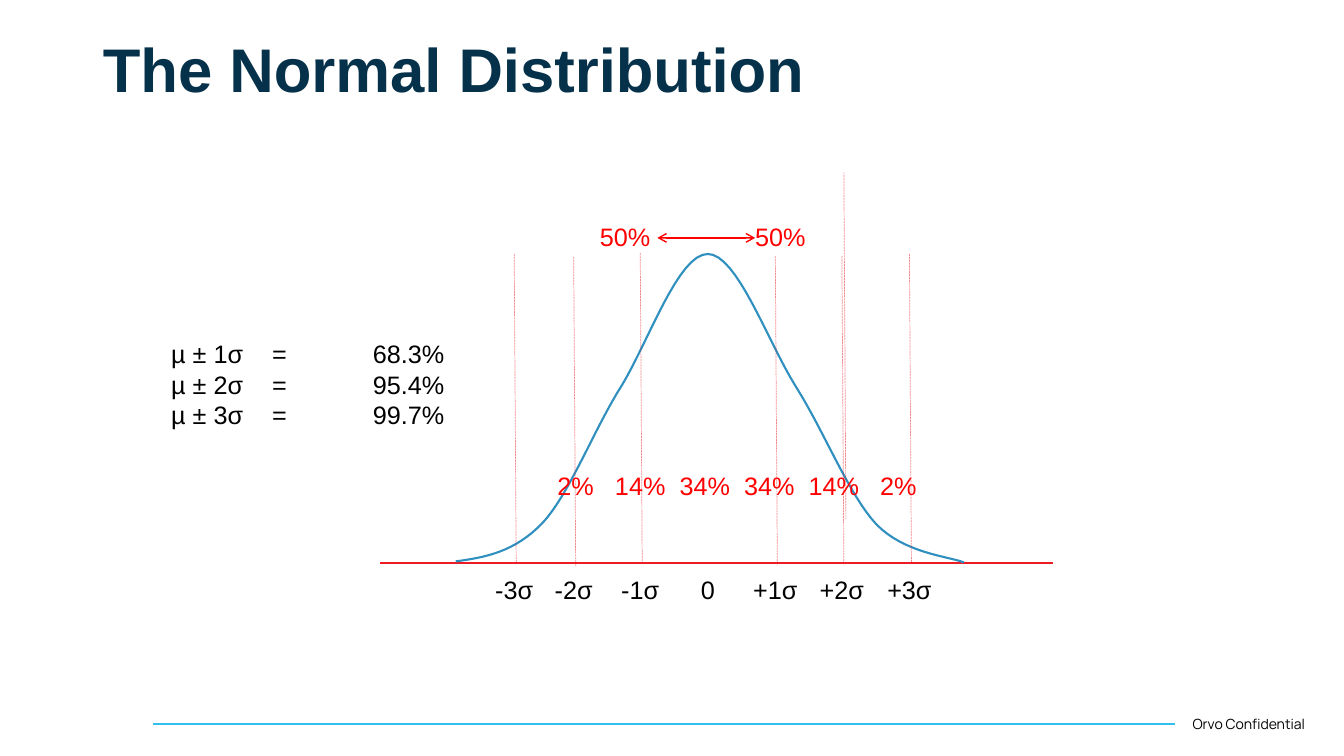
from pptx import Presentation
from pptx.dml.color import RGBColor
from pptx.enum.dml import MSO_LINE_DASH_STYLE as DASH
from pptx.enum.shapes import MSO_CONNECTOR as CONNECTOR
from pptx.enum.text import MSO_ANCHOR as ANCHOR, PP_ALIGN as ALIGN
from pptx.oxml.ns import qn
from pptx.util import Inches, Pt
from lxml.etree import SubElement

NAVY, BLACK, RED = "05314A", "000000", "FF0000"
AXIS_RED, DROP_RED, CURVE_BLUE, FOOTER_BLUE = "EC1C24", "EC161F", "2F90C0", "30BFEF"

# Curve in inches from the chart corner: a start, then (control, control, end)
CURVE_START = (0.75, 3.86)
CURVE_SEGMENTS = [
    ((1.04, 3.82), (1.33, 3.77), (1.61, 3.48)),
    ((1.88, 3.19), (2.12, 2.55), (2.4, 2.11)),
    ((2.67, 1.66), (2.96, 0.81), (3.25, 0.81)),
    ((3.54, 0.81), (3.84, 1.67), (4.12, 2.12)),
    ((4.4, 2.56), (4.65, 3.2), (4.92, 3.49)),
    ((5.2, 3.78), (5.64, 3.81), (5.79, 3.87)),
]
# Sigma label, its offset from the chart's left, top of its drop line
SIGMAS = [("-3σ", 1.33, 0.81), ("-2σ", 1.92, 0.84), ("-1σ", 2.58, 0.8), ("0", 3.25, None),
          ("+1σ", 3.92, 0.83), ("+2σ", 4.58, 0.83), ("+3σ", 5.25, 0.81)]
SHARES = ["2%", "14%", "34%", "34%", "14%", "2%"]
COVERAGE = ["µ ± 1σ\t=\t68.3%", "µ ± 2σ\t=\t95.4%", "µ ± 3σ\t=\t99.7%"]


def color(hex_code):
    return RGBColor.from_string(hex_code)


def format_text(frame, size, hex_code, name="Arial", bold=False):
    for paragraph in frame.paragraphs:
        for run in paragraph.runs:
            font = run.font
            font.size, font.name, font.bold = Pt(size), name, bold
            font.color.rgb = color(hex_code)


def add_text(slide, left, top, width, height, text, size, hex_code, name="Arial"):
    box = slide.shapes.add_textbox(Inches(left), Inches(top), Inches(width), Inches(height))
    frame = box.text_frame
    frame.word_wrap = True
    frame.text = text
    format_text(frame, size, hex_code, name)
    return frame


def add_label(slide, center, top, text, hex_code):
    frame = add_text(slide, center - 0.4, top, 0.8, 0.4, text, 18, hex_code)
    frame.paragraphs[0].alignment = ALIGN.CENTER


def add_line(slide, start, end, hex_code, width, dashed=False, arrow=False):
    line = slide.shapes.add_connector(CONNECTOR.STRAIGHT, *map(Inches, start + end))
    line.line.color.rgb = color(hex_code)
    line.line.width = Pt(width)
    outline = line.line._get_or_add_ln()
    if dashed:
        line.line.dash_style = DASH.SQUARE_DOT
        tint = outline.find(".//" + qn("a:srgbClr"))
        SubElement(tint, qn("a:alpha"), val="50000")
    if arrow:
        SubElement(outline, qn("a:tailEnd"), type="arrow")
    SubElement(line._element.spPr, qn("a:effectLst"))


def bezier_points(start, segments, steps=16):
    points = [start]
    for first, second, end in segments:
        origin = points[-1]
        for step in range(1, steps + 1):
            t = step / steps
            weights = ((1 - t) ** 3, 3 * t * (1 - t) ** 2, 3 * t * t * (1 - t), t ** 3)
            corners = (origin, first, second, end)
            points.append(tuple(sum(w * c[axis] for w, c in zip(weights, corners))
                                for axis in (0, 1)))
    return points


def add_title(slide, left, top, width, height):
    title = slide.shapes.title
    title.left, title.top = Inches(left), Inches(top)
    title.width, title.height = Inches(width), Inches(height)
    frame = title.text_frame
    frame.text = "The Normal Distribution"
    frame.vertical_anchor = ANCHOR.MIDDLE
    frame.paragraphs[0].alignment = ALIGN.LEFT
    frame.paragraphs[0].line_spacing = 0.9
    format_text(frame, 44, NAVY, bold=True)


def add_footer(slide, left, top, width):
    add_line(slide, (left, top), (left + width, top), FOOTER_BLUE, 1.5)
    add_text(slide, left + width + 0.08, top - 0.13, 1.48, 0.27,
             "Orvo Confidential", 10, BLACK, "Manrope")


def add_bell_chart(slide, left, top, width, height):
    # Axis
    base = top + height
    add_line(slide, (left, base), (left + width, base), AXIS_RED, 1.5)

    # Bell curve
    points = [(Inches(left + x), Inches(top + y))
              for x, y in bezier_points(CURVE_START, CURVE_SEGMENTS)]
    builder = slide.shapes.build_freeform(*points[0])
    builder.add_line_segments(points[1:], close=False)
    curve = builder.convert_to_shape()
    curve.shadow.inherit = False
    curve.fill.background()
    curve.line.color.rgb = color(CURVE_BLUE)
    curve.line.width = Pt(1.5)

    # Drop lines and sigma labels
    add_line(slide, (left + 4.6, top), (left + 4.62, top + 3.44), DROP_RED, 0.5, dashed=True)
    for sigma, offset, drop in SIGMAS:
        x = left + offset
        if drop is not None:
            add_line(slide, (x, top + drop), (x + 0.02, top + drop + 3.07),
                     DROP_RED, 0.5, dashed=True)
        add_label(slide, x, base + 0.06, sigma, BLACK)

    # Halves either side of the mean
    middle = left + 3.25
    for label_shift, tip_shift in ((-0.82, -0.5), (0.72, 0.47)):
        add_label(slide, middle + label_shift, top + 0.44, "50%", RED)
        add_line(slide, (middle, top + 0.65), (middle + tip_shift, top + 0.65),
                 RED, 1, arrow=True)

    # Share of each band
    for index, share in enumerate(SHARES):
        add_label(slide, left + 1.94 + 0.64 * index, top + 2.91, share, RED)


def add_coverage(slide, left, top, width, height):
    frame = add_text(slide, left, top, width, height, "\n".join(COVERAGE), 18, BLACK)
    for paragraph in frame.paragraphs:
        tabs = SubElement(paragraph._p.get_or_add_pPr(), qn("a:tabLst"))
        for stop in (1, 2):
            SubElement(tabs, qn("a:tab"), pos=str(Inches(stop)), algn="l")


def main():
    deck = Presentation()
    deck.slide_width, deck.slide_height = Inches(13.33), Inches(7.5)
    slide = deck.slides.add_slide(deck.slide_layouts[5])
    add_footer(slide, 1.52, 7.18, 10.13)
    add_title(slide, 0.92, 0.28, 11.5, 0.88)
    add_bell_chart(slide, 3.77, 1.71, 6.67, 3.88)
    add_coverage(slide, 1.6, 3.31, 2.94, 1.01)
    deck.save("out.pptx")


if __name__ == "__main__":
    main()
